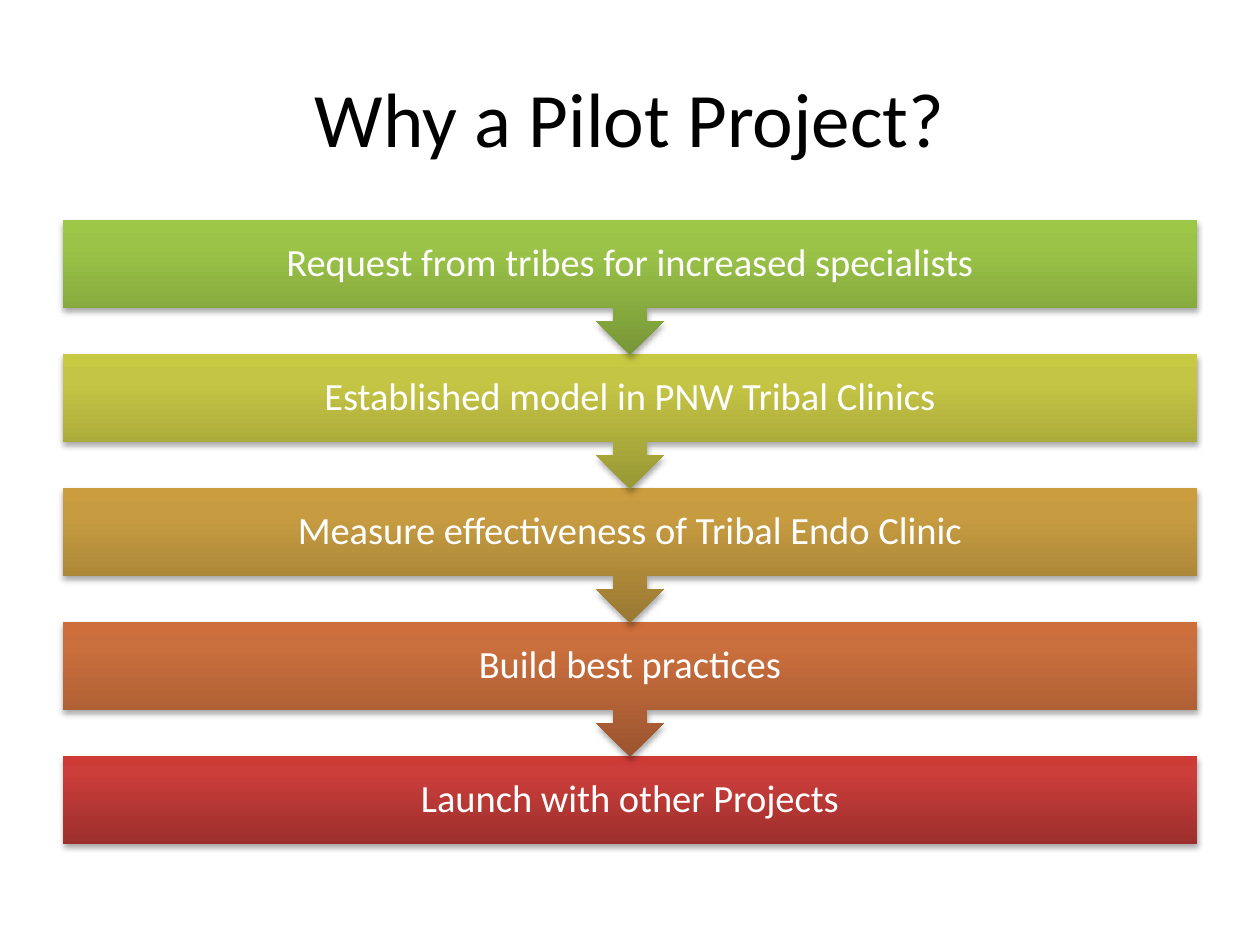
from copy import deepcopy

from lxml.etree import SubElement
from pptx import Presentation
from pptx.dml.color import RGBColor
from pptx.enum.shapes import MSO_SHAPE as Shape
from pptx.enum.text import MSO_ANCHOR as Anchor, PP_ALIGN as Align
from pptx.oxml.ns import qn
from pptx.util import Pt

PX = 914400 // 126
BLACK = RGBColor(0x00, 0x00, 0x00)
WHITE = RGBColor(0xFF, 0xFF, 0xFF)
GREEN = RGBColor(0x77, 0x97, 0x37), RGBColor(0x9B, 0xC3, 0x48), RGBColor(0x9D, 0xC7, 0x46)
LIME = RGBColor(0x98, 0x98, 0x35), RGBColor(0xC5, 0xC5, 0x45), RGBColor(0xC8, 0xC9, 0x42)
OCHRE = RGBColor(0x99, 0x78, 0x32), RGBColor(0xC7, 0x9C, 0x41), RGBColor(0xCB, 0x9D, 0x3F)
ORANGE = RGBColor(0x9B, 0x55, 0x2F), RGBColor(0xC9, 0x6E, 0x3D), RGBColor(0xCD, 0x6E, 0x3B)
RED = RGBColor(0x9C, 0x2F, 0x2D), RGBColor(0xCB, 0x3E, 0x3A), RGBColor(0xCE, 0x3B, 0x37)

LEFT, WIDTH = 63, 1134
FIRST_TOP, PITCH = 220, 134
BOX_HEIGHT, CALLOUT_HEIGHT = 88, 135
INSET = 21

STEPS = [
    ("Request from tribes for increased specialists", GREEN),
    ("Established model in PNW Tribal Clinics", LIME),
    ("Measure effectiveness of Tribal Endo Clinic", OCHRE),
    ("Build best practices", ORANGE),
    ("Launch with other Projects", RED),
]


def write(shape, text, size, color):
    frame = shape.text_frame
    frame.word_wrap = True
    frame.vertical_anchor = Anchor.MIDDLE
    paragraph = frame.paragraphs[0]
    paragraph.text = text
    paragraph.alignment = Align.CENTER
    paragraph.font.name = "Calibri"
    paragraph.font.size = Pt(size)
    paragraph.font.color.rgb = color


def shade(shape, colors):
    shape.line.fill.background()
    shape.fill.gradient()
    shape.fill.gradient_angle = 90
    properties = shape._element.spPr
    stop_list = properties.find(qn("a:gradFill")).find(qn("a:gsLst"))
    stop_list.append(deepcopy(stop_list[0]))
    for stop, position, color in zip(shape.fill.gradient_stops, (0, 0.8, 1), colors):
        stop.position = position
        stop.color.rgb = color
    shape.shadow.inherit = False
    effects = properties.find(qn("a:effectLst"))
    shadow = SubElement(effects, qn("a:outerShdw"), blurRad=str(Pt(3.1)),
                        dist=str(Pt(1.8)), dir="5400000", rotWithShape="0")
    shadow_color = SubElement(shadow, qn("a:srgbClr"), val="000000")
    SubElement(shadow_color, qn("a:alpha"), val="35000")


presentation = Presentation()
presentation.slide_width = 1260 * PX
presentation.slide_height = 945 * PX
slide = presentation.slides.add_slide(presentation.slide_layouts[6])

title = slide.shapes.add_textbox(LEFT * PX, 38 * PX, WIDTH * PX, 158 * PX)
write(title, "Why a Pilot Project?", 44, BLACK)

last = len(STEPS) - 1
for index, (text, colors) in reversed(list(enumerate(STEPS))):
    kind, height = Shape.DOWN_ARROW_CALLOUT, CALLOUT_HEIGHT
    if index == last:
        kind, height = Shape.RECTANGLE, BOX_HEIGHT
    top = FIRST_TOP + index * PITCH
    step = slide.shapes.add_shape(kind, LEFT * PX, top * PX, WIDTH * PX, height * PX)
    shade(step, colors)
    write(step, text, 22, WHITE)
    frame = step.text_frame
    frame.margin_left = frame.margin_right = INSET * PX
    frame.margin_top = frame.margin_bottom = INSET * PX
    frame.paragraphs[0].line_spacing = 0.9

presentation.save("out.pptx")
